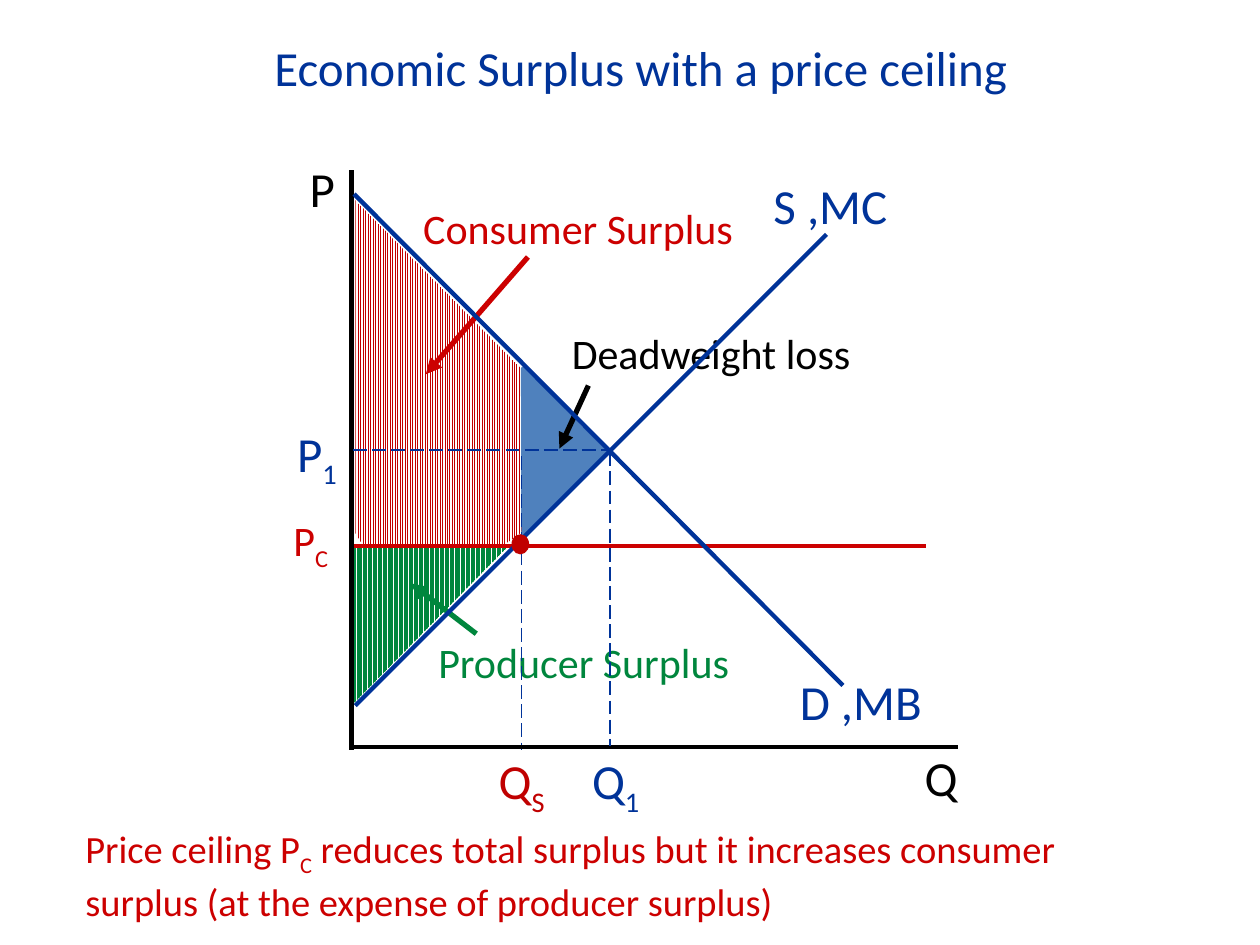
from lxml.etree import SubElement
from pptx import Presentation
from pptx.dml.color import RGBColor
from pptx.enum.dml import MSO_LINE, MSO_PATTERN
from pptx.enum.shapes import MSO_CONNECTOR, MSO_SHAPE
from pptx.enum.text import MSO_ANCHOR, MSO_AUTO_SIZE, PP_ALIGN
from pptx.oxml.ns import qn
from pptx.util import Inches, Pt

NAVY = RGBColor(0x00, 0x33, 0x99)
RED = RGBColor(0xCC, 0x00, 0x00)
DARK_RED = RGBColor(0xC0, 0x00, 0x00)
GREEN = RGBColor(0x00, 0x86, 0x3D)
BLUE = RGBColor(0x4F, 0x81, 0xBD)
BLACK = RGBColor(0x00, 0x00, 0x00)
WHITE = RGBColor(0xFF, 0xFF, 0xFF)

TITLE = ("Economic Surplus with a price ceiling",)
CAPTION = ("Price ceiling P", "C", " reduces total surplus but it increases "
           "consumer surplus (at the expense of producer surplus)")

LABELS = [
    (CAPTION, (0.58, 6.5, 8.83, 0.84), 22, RED, 1),
    (("Q", "S"), (3.86, 5.96, 0.75, 0.49), 28, DARK_RED, 0.8),
    (("P", "C"), (2.23, 4.08, 0.7, 0.54), 24, RED, 0.8),
    (("Producer Surplus",), (3.38, 5, 2.68, 0.5), 24, GREEN, 1),
    (("Consumer Surplus",), (3.26, 1.56, 2.68, 0.5), 24, RED, 1),
    (("D ,MB",), (6.25, 5.28, 1.44, 0.57), 28, NAVY, 1),
    (("Q",), (7.24, 5.88, 0.51, 0.57), 28, BLACK, 1),
    (("P",), (2.36, 1.3, 0.45, 0.49), 28, BLACK, 0.8),
    (("S ,MC",), (6.04, 1.34, 1.25, 0.57), 28, NAVY, 1),
    (("P", "1"), (2.26, 3.36, 0.58, 0.49), 28, NAVY, 0.8),
    (("Q", "1"), (4.6, 5.96, 0.75, 0.48), 28, NAVY, 0.8),
]

LINES = [
    ((4.14, 3.62), (4.14, 5.95), NAVY, 1, "dash"),
    ((4.67, 3.06), (4.44, 3.56), BLACK, 3, "arrow"),
    ((2.8, 4.33), (7.35, 4.33), RED, 2.25, "plain"),
    ((3.78, 5.03), (3.26, 4.63), GREEN, 3, "arrow"),
    ((4.19, 2.04), (3.38, 2.97), RED, 3, "arrow"),
    ((2.82, 5.6), (6.56, 1.86), NAVY, 2.5, "plain"),
    ((2.79, 1.35), (2.79, 5.95), BLACK, 2.5, "plain"),
    ((2.8, 5.93), (7.6, 5.93), BLACK, 2.5, "plain"),
    ((2.81, 1.54), (6.69, 5.44), NAVY, 2.5, "plain"),
    ((2.8, 3.57), (4.85, 3.57), NAVY, 1, "dash"),
    ((4.84, 3.59), (4.84, 5.92), NAVY, 1, "dash"),
]

CONSUMER_START = [(2.82, 4.23), (2.82, 1.59), (4.19, 2.98)]
CONSUMER_CURVES = [
    ((4.19, 2.98), (4.38, 3.4), (4.35, 4.03), (4.12, 4.24)),
    ((4.12, 4.24), (3.89, 4.45), (3.01, 4.65), (2.82, 4.23)),
]
CURVE_STEPS = 16


def curve_points(curve):
    for step in range(1, CURVE_STEPS + 1):
        t = step / CURVE_STEPS
        weights = ((1 - t) ** 3, 3 * t * (1 - t) ** 2, 3 * t ** 2 * (1 - t), t ** 3)
        yield tuple(sum(w * point[axis] for w, point in zip(weights, curve))
                    for axis in (0, 1))


def style_area(shape, color, pattern=None):
    shape.shadow.inherit = False
    shape.line.fill.background()
    if pattern is None:
        shape.fill.solid()
    else:
        shape.fill.patterned()
        shape.fill.pattern = pattern
        shape.fill.back_color.rgb = WHITE
    shape.fill.fore_color.rgb = color


def add_consumer_area(page):
    outline = CONSUMER_START + [p for curve in CONSUMER_CURVES for p in curve_points(curve)]
    points = [(Inches(x), Inches(y)) for x, y in outline]
    builder = page.shapes.build_freeform(*points[0], scale=1.0)
    builder.add_line_segments(points[1:], close=True)
    style_area(builder.convert_to_shape(), DARK_RED, MSO_PATTERN.LIGHT_VERTICAL)


def add_area(page, kind, place, color, rotation=0, pattern=None):
    shape = page.shapes.add_shape(kind, *map(Inches, place))
    shape.rotation = rotation
    style_area(shape, color, pattern)
    return shape


def add_label(page, spans, place, size, color, spacing=1, wrap=True):
    box = page.shapes.add_textbox(*map(Inches, place))
    frame = box.text_frame
    frame.word_wrap = wrap
    frame.auto_size = MSO_AUTO_SIZE.SHAPE_TO_FIT_TEXT
    para = frame.paragraphs[0]
    para.line_spacing = spacing
    para.font.name = "Calibri"
    para.font.size = Pt(size)
    para.font.color.rgb = color
    for index, text in enumerate(spans):
        span = para.add_run()
        span.text = text
        is_subscript = index % 2 == 1
        if is_subscript:
            span._r.get_or_add_rPr().set("baseline", "-25000")
    return frame


def add_line(page, start, end, color, width, style):
    line = page.shapes.add_connector(MSO_CONNECTOR.STRAIGHT, *map(Inches, start + end))
    line.line.color.rgb = color
    line.line.width = Pt(width)
    if style == "dash":
        line.line.dash_style = MSO_LINE.LONG_DASH
    if style == "arrow":
        SubElement(line.line._get_or_add_ln(), qn("a:tailEnd"), type="triangle")
    SubElement(line._element.spPr, qn("a:effectLst"))


def main():
    deck = Presentation()
    deck.slide_width, deck.slide_height = Inches(10), Inches(7.5)
    page = deck.slides.add_slide(deck.slide_layouts[6])

    add_consumer_area(page)
    add_area(page, MSO_SHAPE.RIGHT_TRIANGLE, (2.8, 4.36, 1.23, 1.21), GREEN,
             90, MSO_PATTERN.DARK_VERTICAL)
    deadweight = add_area(page, MSO_SHAPE.RIGHT_TRIANGLE, (3.68, 3.12, 0.94, 0.92),
                          BLUE, 225.5)
    deadweight.line.color.rgb = BLUE
    deadweight.line.width = Pt(2)

    title = add_label(page, TITLE, (0.17, 0.25, 9.83, 0.57), 28, NAVY)
    title.vertical_anchor = MSO_ANCHOR.MIDDLE
    title.paragraphs[0].alignment = PP_ALIGN.CENTER
    add_label(page, ("Deadweight loss",), (4.44, 2.55, 2.43, 0.5), 24, BLACK, wrap=False)
    for label in LABELS:
        add_label(page, *label)
    for line in LINES:
        add_line(page, *line)
    add_area(page, MSO_SHAPE.OVAL, (4.06, 4.24, 0.14, 0.16), DARK_RED)

    deck.save("out.pptx")


if __name__ == "__main__":
    main()
